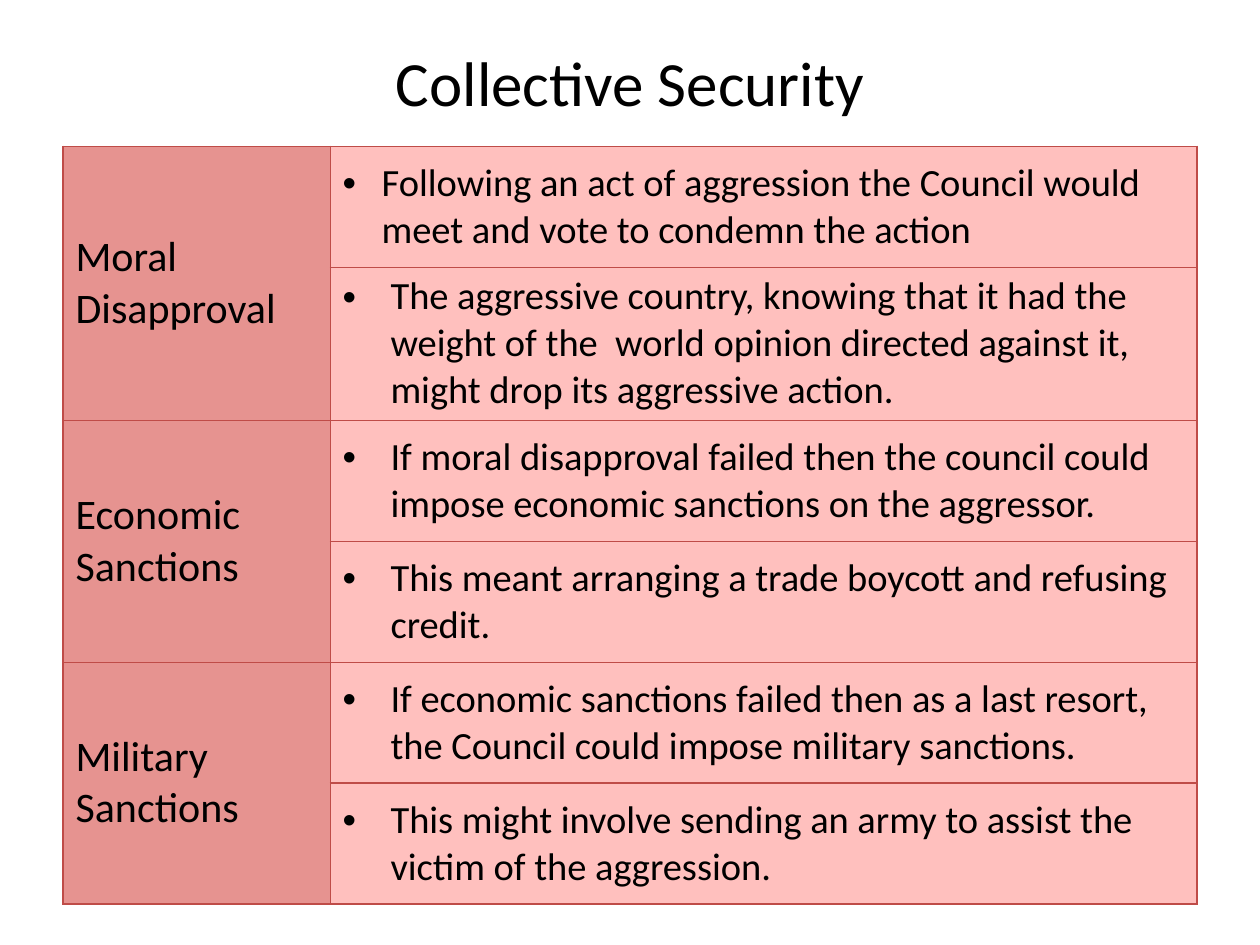
from dataclasses import dataclass

from lxml import etree
from pptx import Presentation
from pptx.dml.color import RGBColor
from pptx.enum.text import MSO_ANCHOR, PP_ALIGN
from pptx.oxml.ns import qn
from pptx.util import Inches, Pt

MIDDLE = MSO_ANCHOR.MIDDLE
CENTER = PP_ALIGN.CENTER

FONT = "Calibri"
BLACK, BORDER = "000000", "BF4C48"
LABEL_FILL, POINT_FILL = "E69390", "FFC0BE"
MARGIN, TITLE_TOP, TABLE_TOP = 0.5, 0.13, 1.16
COLUMNS = (2.12, 6.88)
ROW, TALL_ROW = 0.96, 1.17
TITLE_ONLY = 5


@dataclass
class Point:
    text: str
    indent: float = 0.38
    height: float = ROW


@dataclass
class Measure:
    label: str
    points: tuple[Point, ...]


MEASURES = (
    Measure("Moral Disapproval", (
        Point("Following an act of aggression the Council would meet and vote "
              "to condemn the action", indent=0.31),
        Point("The aggressive country, knowing that it had the weight of the  world "
              "opinion directed against it, might drop its aggressive action.",
              height=TALL_ROW),
    )),
    Measure("Economic Sanctions", (
        Point("If moral disapproval failed then the council could impose economic "
              "sanctions on the aggressor."),
        Point("This meant arranging a trade boycott and refusing credit."),
    )),
    Measure("Military Sanctions", (
        Point("If economic sanctions failed then as a last resort, the Council could "
              "impose military sanctions."),
        Point("This might involve sending an army to assist the victim of the aggression."),
    )),
)


def rgb(value: str) -> RGBColor:
    return RGBColor.from_string(value)


def add_text(p, text: str, size: float) -> None:
    r = p.add_run()
    r.text = text
    r.font.name = FONT
    r.font.size = Pt(size)
    r.font.bold = False
    r.font.color.rgb = rgb(BLACK)


def add_bullet(p, indent: float) -> None:
    pPr = p._p.get_or_add_pPr()
    pPr.set("marL", str(Inches(indent)))
    pPr.set("indent", str(-Inches(indent)))
    etree.SubElement(pPr, qn("a:buFont"), typeface="Arial")
    etree.SubElement(pPr, qn("a:buChar"), char="•")


def style_cell(cell, fill: str) -> None:
    """Border all four sides, then fill and centre vertically."""
    tcPr = cell._tc.get_or_add_tcPr()
    for side in ("lnL", "lnR", "lnT", "lnB"):
        ln = etree.SubElement(tcPr, qn(f"a:{side}"), w=str(Pt(0.75)))
        solid = etree.SubElement(ln, qn("a:solidFill"))
        etree.SubElement(solid, qn("a:srgbClr"), val=BORDER)
    cell.fill.solid()
    cell.fill.fore_color.rgb = rgb(fill)
    cell.vertical_anchor = MIDDLE


def add_title(s, text: str) -> None:
    title = s.shapes.title
    title.left, title.top = Inches(MARGIN), Inches(TITLE_TOP)
    title.width, title.height = Inches(sum(COLUMNS)), Inches(TABLE_TOP - TITLE_TOP)
    tf = title.text_frame
    tf.vertical_anchor = MIDDLE
    tf.paragraphs[0].alignment = CENTER
    add_text(tf.paragraphs[0], text, 36)


def add_measures(s, measures: tuple[Measure, ...]) -> None:
    points = [point for measure in measures for point in measure.points]
    table = s.shapes.add_table(
        len(points), len(COLUMNS), Inches(MARGIN), Inches(TABLE_TOP),
        Inches(sum(COLUMNS)), Inches(sum(point.height for point in points))).table
    table.first_row = table.horz_banding = False
    for column, width in zip(table.columns, COLUMNS):
        column.width = Inches(width)

    for i, point in enumerate(points):
        table.rows[i].height = Inches(point.height)
        style_cell(table.cell(i, 0), LABEL_FILL)
        style_cell(table.cell(i, 1), POINT_FILL)
        p = table.cell(i, 1).text_frame.paragraphs[0]
        add_bullet(p, point.indent)
        add_text(p, point.text, 22)

    top = 0
    for measure in measures:
        bottom = top + len(measure.points)
        label = table.cell(top, 0)
        label.merge(table.cell(bottom - 1, 0))
        add_text(label.text_frame.paragraphs[0], measure.label, 24)
        top = bottom


def main() -> None:
    prs = Presentation()
    prs.slide_width, prs.slide_height = Inches(10), Inches(7.5)
    s = prs.slides.add_slide(prs.slide_layouts[TITLE_ONLY])
    add_title(s, "Collective Security")
    add_measures(s, MEASURES)
    prs.save("out.pptx")


if __name__ == "__main__":
    main()
